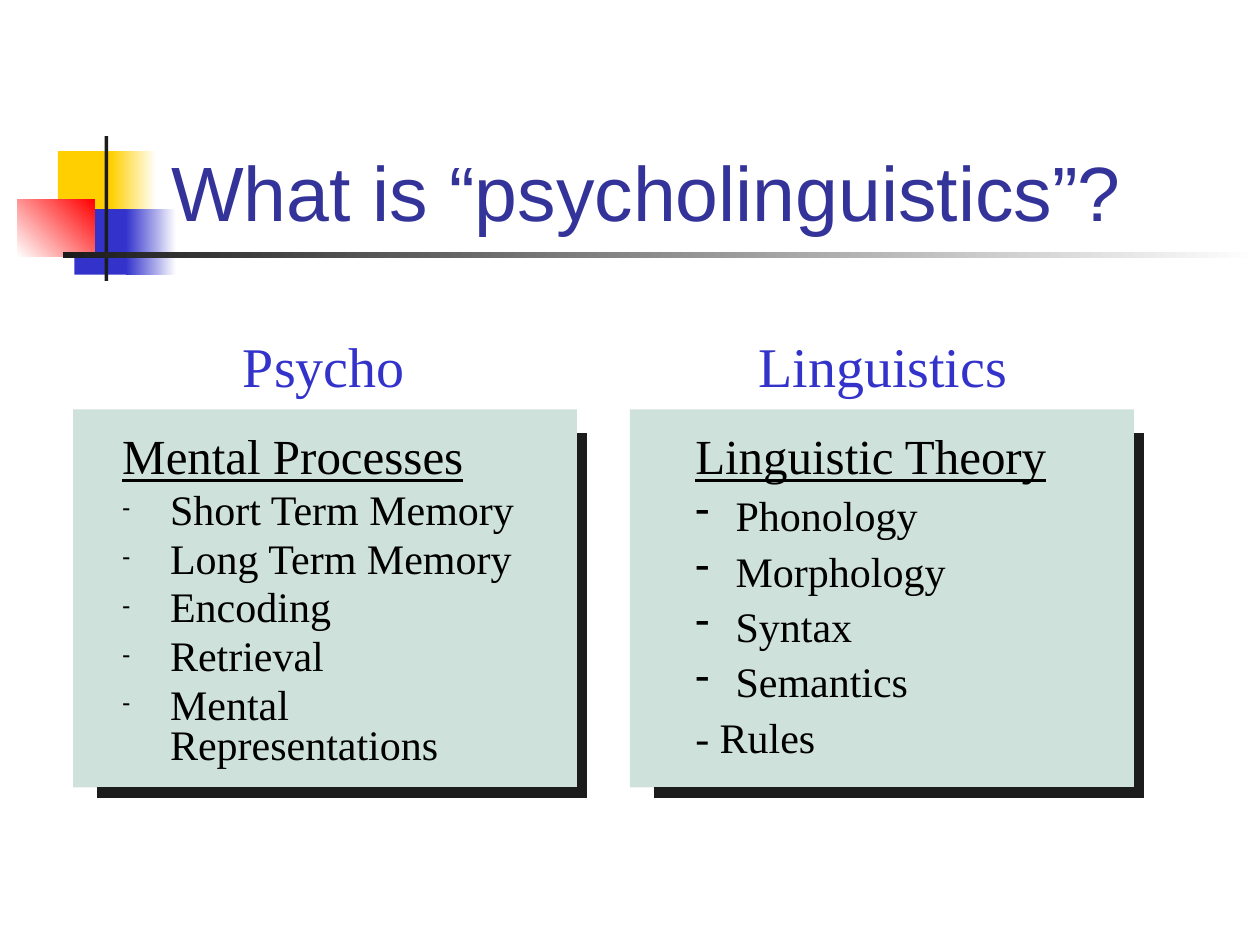
from lxml.etree import SubElement as Sub
from pptx import Presentation
from pptx.dml.color import RGBColor as RGB
from pptx.enum.shapes import MSO_CONNECTOR as CONN, MSO_SHAPE as SHAPE
from pptx.enum.text import MSO_ANCHOR as ANCHOR, MSO_AUTO_SIZE as AUTO, PP_ALIGN as ALIGN
from pptx.oxml.ns import qn
from pptx.util import Emu, Pt

PX = 9144
COLORS = {
    "yellow": "FFCF01", "blue": "3333CC", "red": "FF0000", "white": "FFFFFF",
    "dark": "1C1C1C", "title": "333399", "panel": "136A4E", "text": "000000",
}
SERIF = "Times New Roman"
TITLE = {"size": Pt(44), "name": "Arial", "color": "title"}
LABEL = {"size": Pt(32), "name": SERIF, "color": "blue"}
HEADING = {"size": Pt(28), "name": SERIF, "color": "text", "underline": True}
ITEM = {"size": Pt(24), "name": SERIF, "color": "text"}
PROCESSES = ["Short Term Memory", "Long Term Memory", "Encoding", "Retrieval",
             "Mental Representations"]
THEORY = ["Phonology", "Morphology", "Syntax", "Semantics"]


def px(*values):
    return [Emu(v * PX) for v in values]


def rgb(name):
    return RGB.from_string(COLORS[name])


class Deck:
    """Holds the style and the current slide, and draws each kind of element."""

    def __init__(self):
        self.prs = Presentation()
        self.prs.slide_width, self.prs.slide_height = px(1000, 750)
        self.s = self.prs.slides.add_slide(self.prs.slide_layouts[1])

    def rect(self, box, color, end=None, angle=0, alpha=None):
        sp = self.s.shapes.add_shape(SHAPE.RECTANGLE, *px(*box))
        sp.shadow.inherit = False
        sp.line.fill.background()
        if end:
            sp.fill.gradient()
            sp.fill.gradient_angle = angle
            for stop, name in zip(sp.fill.gradient_stops, (color, end)):
                stop.color.rgb = rgb(name)
        else:
            sp.fill.solid()
            sp.fill.fore_color.rgb = rgb(color)
        if alpha:
            clr = sp.element.spPr.find(".//" + qn("a:srgbClr"))
            Sub(clr, qn("a:alpha"), val=str(alpha * 1000))

    def line(self, ends, color, width):
        ln = self.s.shapes.add_connector(CONN.STRAIGHT, *px(*ends))
        ln.line.color.rgb = rgb(color)
        ln.line.width = Pt(width)
        Sub(ln.element.spPr, qn("a:effectLst"))

    def panel(self, x, y=325):
        self.rect((x, y, 400, 300), "panel", alpha=20)
        self.line((x + 19, y + 304, x + 408, y + 304), "dark", 6)
        self.line((x + 404, y + 19, x + 404, y + 303), "dark", 6)

    def placeholder(self, index, box, anchor):
        sp = self.s.placeholders[index]
        sp.left, sp.top, sp.width, sp.height = px(*box)
        sp.element.getparent().append(sp.element)
        tf = sp.text_frame
        tf.auto_size, tf.vertical_anchor = AUTO.NONE, anchor
        return tf

    def textbox(self, box, wrap=True):
        tf = self.s.shapes.add_textbox(*px(*box)).text_frame
        tf.word_wrap = wrap
        return tf

    def paragraph(self, tf, text, font, indent=0, bullet=None, **spacing):
        p = tf.paragraphs[0] if not tf.paragraphs[0].runs else tf.add_paragraph()
        formats = {"alignment": ALIGN.LEFT, "space_before": Pt(0), **spacing}
        for key, value in formats.items():
            setattr(p, key, value)
        pPr = p._p.get_or_add_pPr()
        pPr.set("marL", str(indent * PX))
        pPr.set("indent", str(-indent * PX))
        if bullet:
            Sub(Sub(pPr, qn("a:buClr")), qn("a:srgbClr"), val=COLORS["text"])
            Sub(pPr, qn("a:buSzPct"), val=str(bullet * 1000))
            Sub(pPr, qn("a:buChar"), char="-")
        else:
            Sub(pPr, qn("a:buNone"))
        r = p.add_run()
        r.text = text
        for key, value in font.items():
            if key == "color":
                r.font.color.rgb = rgb(value)
            else:
                setattr(r.font, key, value)


def main():
    d = Deck()
    d.rect((46, 120, 48, 52), "yellow")
    d.rect((88, 120, 36, 52), "yellow", "white")
    d.rect((59, 166, 46, 52), "blue")
    d.rect((100, 166, 40, 52), "blue", "white")
    d.rect((14, 158, 61, 46), "white", "red", 45)
    d.rect((83, 108, 3, 115), "dark")
    d.rect((50, 200, 950, 5), "dark", "white")
    d.paragraph(d.placeholder(0, (126, 68, 852, 125), ANCHOR.BOTTOM),
                "What is “psycholinguistics”?", TITLE)

    for x in (500, 58):
        d.panel(x)

    tf = d.placeholder(1, (87, 333, 363, 308), ANCHOR.TOP)
    d.paragraph(tf, "Mental Processes", HEADING, 38)
    for text in PROCESSES:
        d.paragraph(tf, text, ITEM, 38, 60, line_spacing=0.8, space_before=Pt(4.8))

    tf = d.textbox((542, 333, 317, 275))
    d.paragraph(tf, "Linguistic Theory", HEADING)
    for text in THEORY:
        d.paragraph(tf, text, ITEM, 32, 100, line_spacing=1.1)
    d.paragraph(tf, "- Rules", ITEM, line_spacing=1.1)

    d.paragraph(d.textbox((183, 258, 149, 63), wrap=False), "Psycho", LABEL)
    d.paragraph(d.textbox((592, 258, 258, 63)), "Linguistics", LABEL)
    d.prs.save("out.pptx")


if __name__ == "__main__":
    main()
